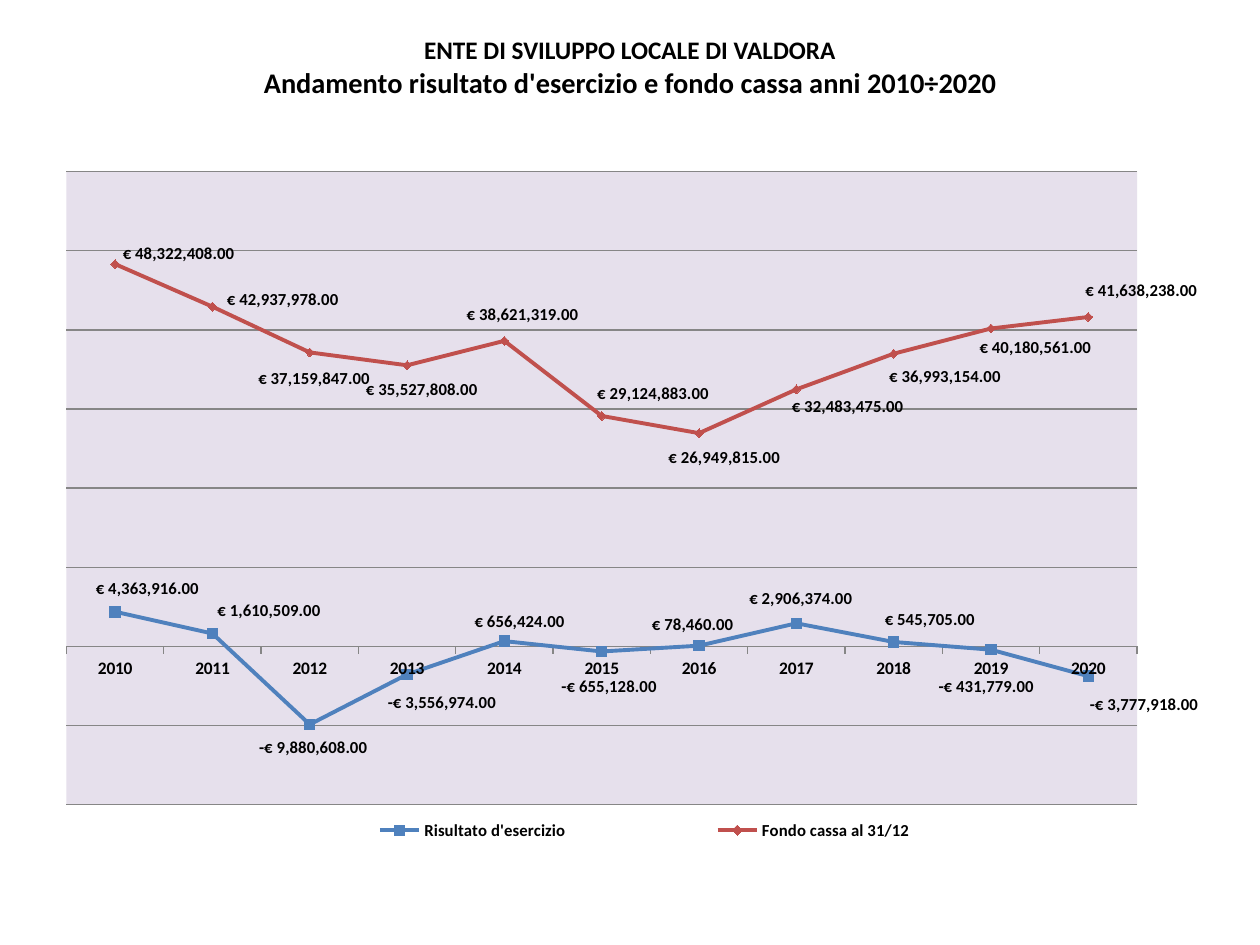
from lxml.etree import SubElement
from pptx import Presentation
from pptx.chart.data import CategoryChartData
from pptx.dml.color import RGBColor
from pptx.enum.chart import (XL_CHART_TYPE, XL_LABEL_POSITION, XL_LEGEND_POSITION,
                             XL_MARKER_STYLE, XL_TICK_LABEL_POSITION, XL_TICK_MARK)
from pptx.enum.text import MSO_ANCHOR, MSO_AUTO_SIZE, PP_ALIGN
from pptx.oxml import parse_xml
from pptx.oxml.ns import qn
from pptx.util import Pt

COLORS = {"text": "000000", "plot": "E6E0EC", "grid": "868686",
          "result": "4F81BD", "cash": "C0504D"}
FONT = "Calibri"
EURO_FORMAT = '"€"\\ #,##0.00;\\-"€"\\ #,##0.00'
CHART_WIDTH, CHART_HEIGHT = 648, 420
LABEL_GAP = 6  # points between a marker and a label at its right
LABEL_SIZE = 9.6

# Label offsets: left edge and centre height in points, from the marker.
SERIES = [
    ("Risultato d'esercizio", "result", XL_MARKER_STYLE.SQUARE, 6,
     [4363916, 1610509, -9880608, -3556974, 656424, -655128,
      78460, 2906374, 545705, -431779, -3777918],
     [(-11, -13), (3, -13), (-29, 13), (-11, 16), (-17, -11), (-23, 20),
      (-27, -12), (-27, -14), (-5, -13), (-30, 21), (1, 16)]),
    ("Fondo cassa al 31/12", "cash", XL_MARKER_STYLE.DIAMOND, 5,
     [48322408, 42937978, 37159847, 35527808, 38621319, 29124883,
      26949815, 32483475, 36993154, 40180561, 41638238],
     [(5, -6), (9, -4), (-29, 15), (-23, 14), (-21, -15), (-2, -13),
      (-17, 14), (-2, 10), (-2, 13), (-6, 11), (-1, -15)]),
]


def make_layout(**settings):
    """Return a c:layout element with the given manual settings."""
    layout = parse_xml('<c:layout xmlns:c="http://schemas.openxmlformats.org/'
                       'drawingml/2006/chart"><c:manualLayout/></c:layout>')
    for name, value in settings.items():
        SubElement(layout[0], qn(f"c:{name}")).set("val", str(value))
    return layout


def style_font(font, size, bold=True):
    font.name, font.size, font.bold = FONT, Pt(size), bold
    font.color.rgb = RGBColor.from_string(COLORS["text"])


deck = Presentation()
deck.slide_width, deck.slide_height = Pt(720), Pt(540)
page = deck.slides.add_slide(deck.slide_layouts[5])

# Title
title = page.shapes.title
title.left, title.top, title.width, title.height = Pt(36), Pt(21.6), Pt(648), Pt(33)
frame = title.text_frame
frame.word_wrap = True
frame.auto_size = MSO_AUTO_SIZE.NONE
frame.vertical_anchor = MSO_ANCHOR.MIDDLE
para = frame.paragraphs[0]
para.alignment = PP_ALIGN.CENTER
span = para.add_run()
span.text = "ENTE DI SVILUPPO LOCALE DI VALDORA"
style_font(span.font, 14.4)
para.add_line_break()
span = para.add_run()
span.text = "Andamento risultato d'esercizio e fondo cassa anni 2010÷2020"
style_font(span.font, 16.2)

# Chart
data = CategoryChartData(number_format=EURO_FORMAT)
data.categories = [str(year) for year in range(2010, 2021)]
for name, color, marker, size, values, offsets in SERIES:
    data.add_series(name, values)
chart = page.shapes.add_chart(XL_CHART_TYPE.LINE_MARKERS, Pt(36.7), Pt(71.3),
                              Pt(CHART_WIDTH), Pt(CHART_HEIGHT), data).chart
chart.has_title = False
style_font(chart.font, 10, bold=False)

plot_area = chart.element.find(f".//{qn('c:plotArea')}")
for old_layout in plot_area.findall(qn("c:layout")):
    plot_area.remove(old_layout)
plot_area.insert(0, make_layout(layoutTarget="inner", xMode="edge", yMode="edge",
                                x=0.002, y=0.064, w=0.95, h=0.861))
plot_area.append(parse_xml(
    '<c:spPr xmlns:c="http://schemas.openxmlformats.org/drawingml/2006/chart" '
    'xmlns:a="http://schemas.openxmlformats.org/drawingml/2006/main"><a:solidFill>'
    f'<a:srgbClr val="{COLORS["plot"]}"/></a:solidFill><a:ln><a:noFill/></a:ln></c:spPr>'))

# Axes
years = chart.category_axis
years.major_tick_mark = XL_TICK_MARK.OUTSIDE
years.tick_label_position = XL_TICK_LABEL_POSITION.NEXT_TO_AXIS
style_font(years.tick_labels.font, 10)
amounts = chart.value_axis
amounts.visible = False
amounts.minimum_scale, amounts.maximum_scale = -20_000_000, 60_000_000
amounts.major_unit = 10_000_000
amounts.has_major_gridlines = True
for line in (years.format.line, amounts.major_gridlines.format.line):
    line.width = Pt(0.75)
    line.color.rgb = RGBColor.from_string(COLORS["grid"])

# Series and their labels
plot = chart.plots[0]
plot.vary_by_categories = False
for series, (name, color, marker, size, values, offsets) in zip(plot.series, SERIES):
    rgb = RGBColor.from_string(COLORS[color])
    series.smooth = False
    series.format.line.width = Pt(2.25)
    series.format.line.color.rgb = rgb
    series.marker.style, series.marker.size = marker, size
    series.marker.format.fill.solid()
    series.marker.format.fill.fore_color.rgb = rgb
    series.marker.format.line.color.rgb = rgb
    labels = series.data_labels
    labels.show_value = True
    labels.number_format, labels.number_format_is_linked = EURO_FORMAT, False
    labels.position = XL_LABEL_POSITION.RIGHT
    style_font(labels.font, LABEL_SIZE)
    for index in range(len(offsets)):
        label = series.points[index].data_label
        style_font(label.font, LABEL_SIZE)
        label.position = XL_LABEL_POSITION.RIGHT
    labels_node = chart.element.findall(f".//{qn('c:ser')}")[series.index].find(qn("c:dLbls"))
    for leader_lines in labels_node.findall(qn("c:showLeaderLines")):
        leader_lines.set("val", "0")
    for node, (across, down) in zip(labels_node.findall(qn("c:dLbl")), offsets):
        node.insert(1, make_layout(x=round((across - LABEL_GAP) / CHART_WIDTH, 4),
                                   y=round(down / CHART_HEIGHT, 4)))

# Legend
chart.has_legend = True
legend = chart.legend
legend.position = XL_LEGEND_POSITION.RIGHT
legend.include_in_layout = False
style_font(legend.font, LABEL_SIZE)
legend_node = chart.element.find(f".//{qn('c:legend')}")
for old_layout in legend_node.findall(qn("c:layout")):
    legend_node.remove(old_layout)
legend_node.insert(1, make_layout(xMode="edge", yMode="edge", x=0.15, y=0.94,
                                  w=0.73, h=0.04))

deck.save("out.pptx")
